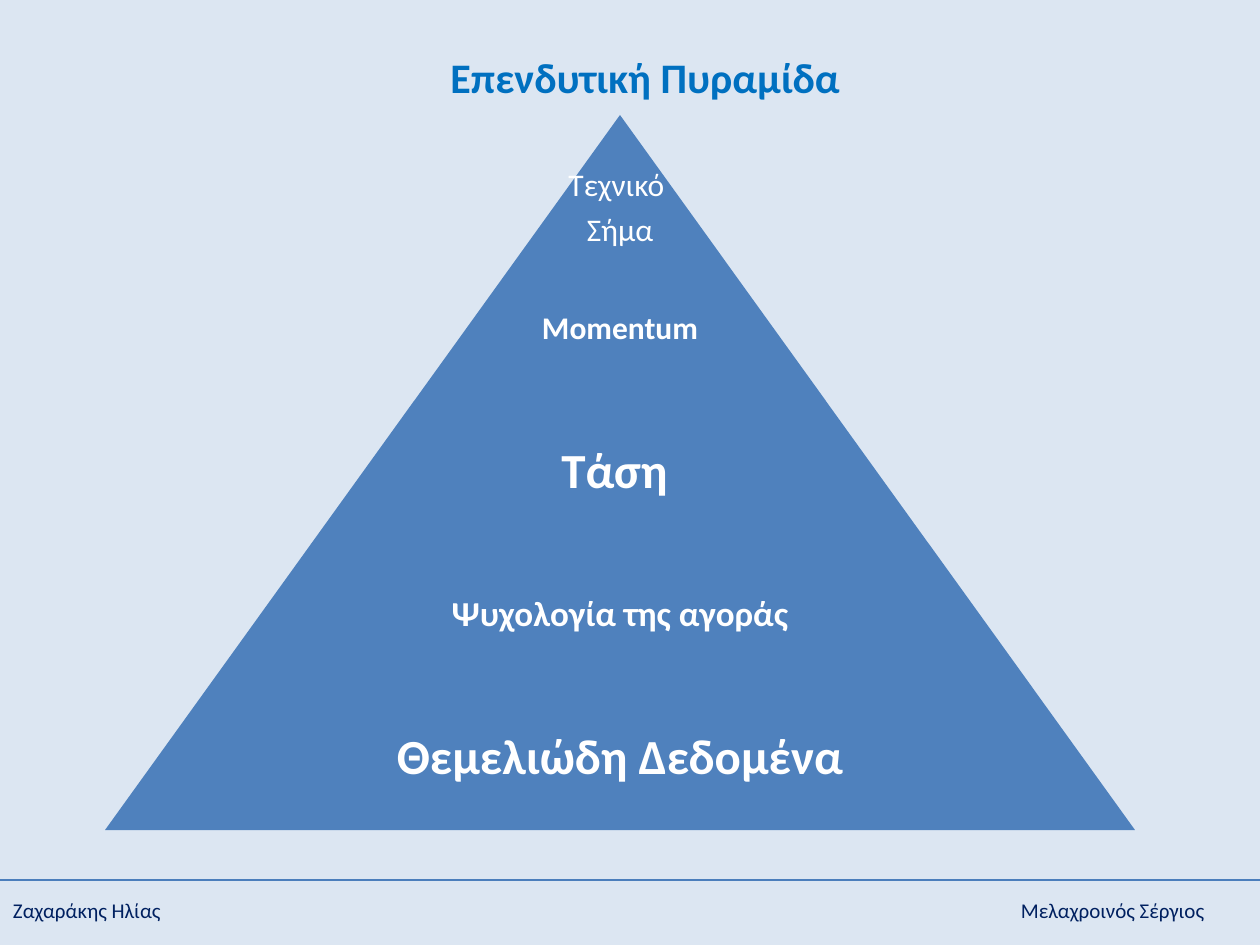
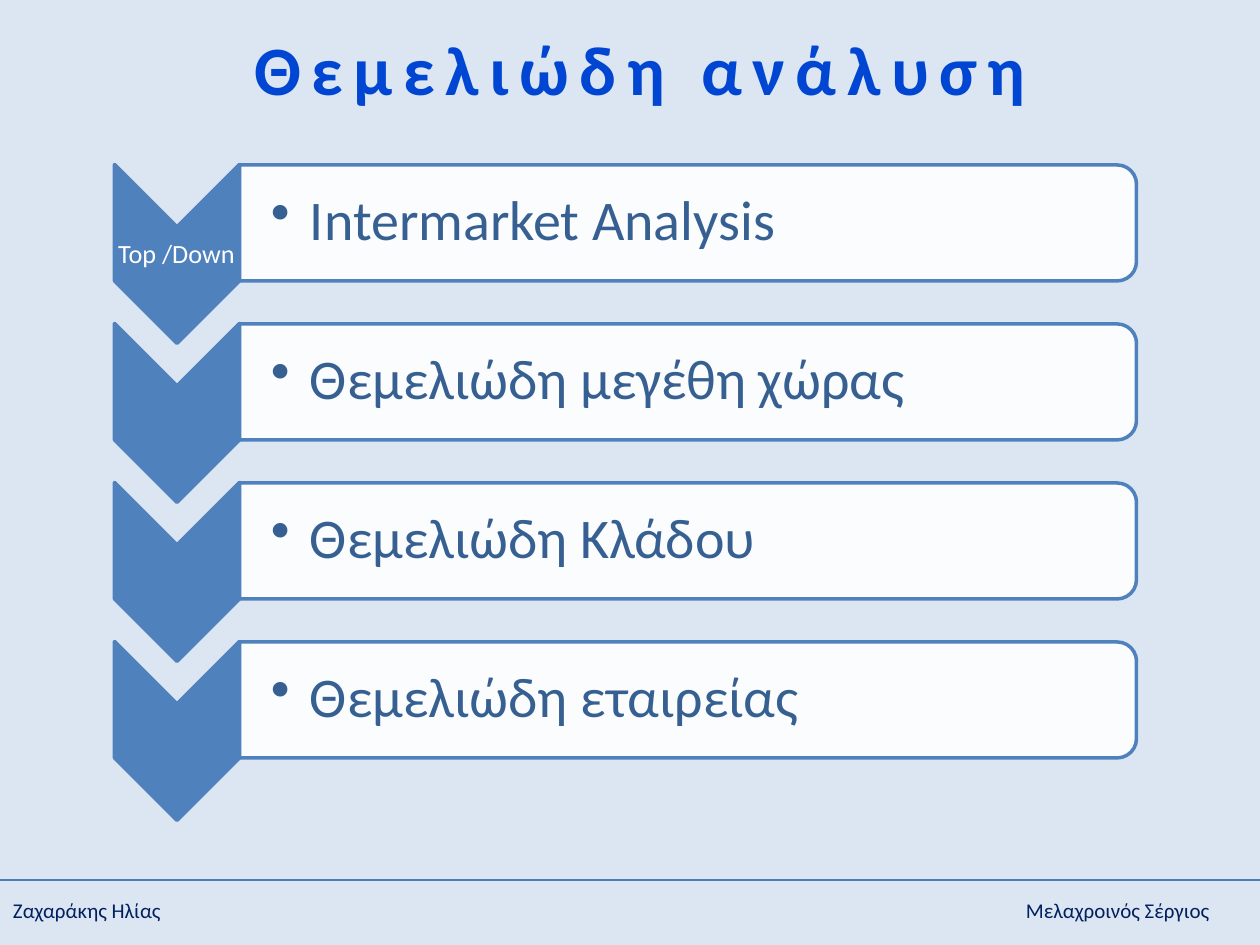
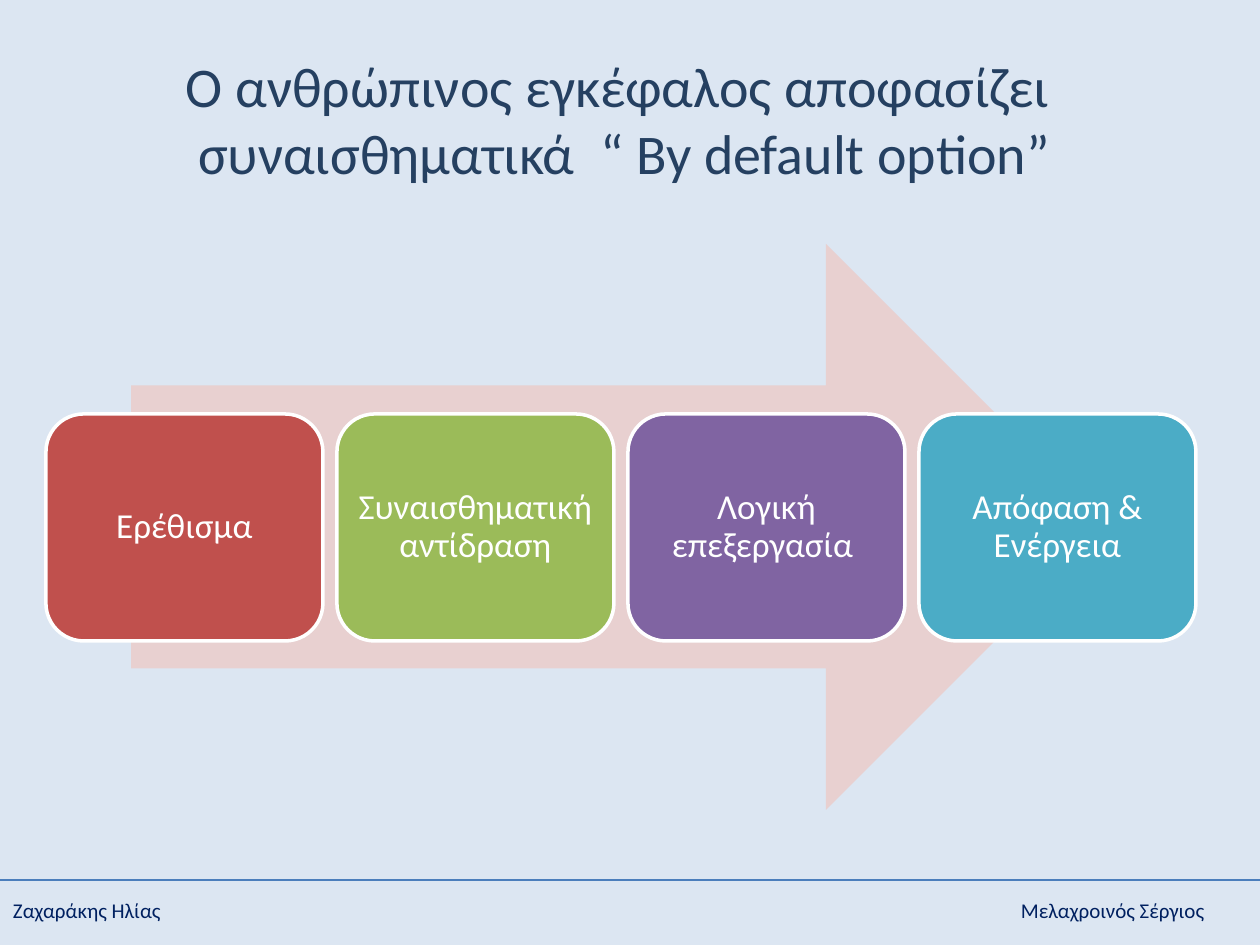
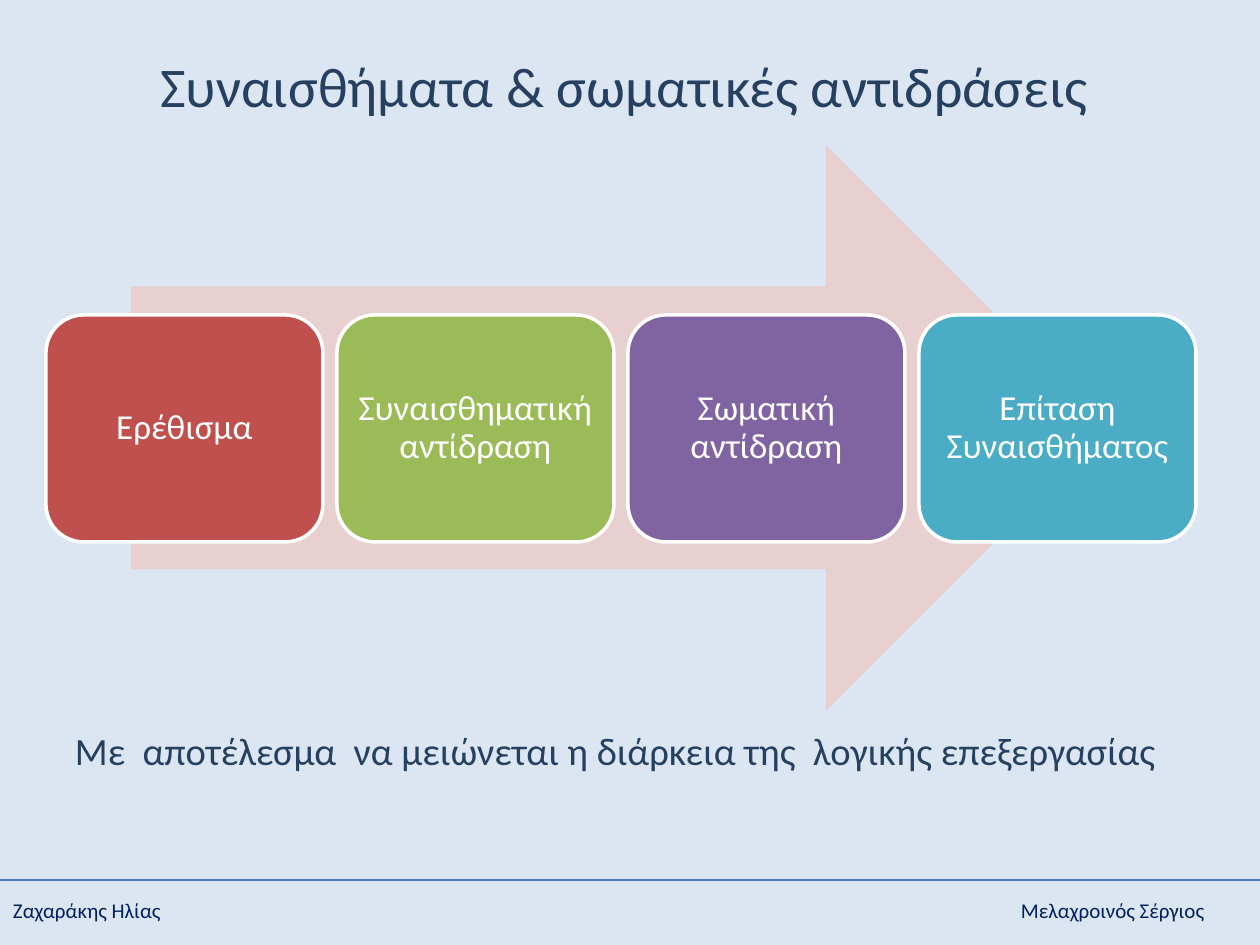
"""Builds four slides on the investment pyramid and emotional decisions."""
from dataclasses import dataclass

from lxml.etree import SubElement
from pptx import Presentation
from pptx.dml.color import RGBColor
from pptx.enum.shapes import MSO_CONNECTOR as Connector, MSO_SHAPE as Preset
from pptx.enum.text import MSO_ANCHOR as Anchor, MSO_AUTO_SIZE as AutoSize, PP_ALIGN as Align
from pptx.oxml.ns import qn
from pptx.util import Pt

SCALE = 914400 / 126
WIDTH, HEIGHT = 1260, 945
TITLE_ONLY = 5


@dataclass(frozen=True)
class Theme:
    """Colours, font and type sizes of the deck."""
    font: str = "Calibri"
    background: str = "DCE6F2"
    white: str = "FFFFFF"
    blue: str = "4F81BD"
    rule: str = "4B7EBC"
    footer: str = "002060"
    pyramid_title: str = "0070C0"
    analysis_title: str = "0046D2"
    ink: str = "254061"
    bullet: str = "376092"
    arrow: str = "E8D0D0"
    cards: tuple = ("C0504D", "9BBB59", "8064A2", "4BACC6")
    footer_size: int = 12
    tag_size: int = 15
    small_size: int = 18
    body_size: int = 20
    note_size: int = 22
    heading_size: int = 24
    level_size: int = 28
    title_size: int = 32
    display_size: float = 39.6


THEME = Theme()


def px(length):
    """Turns px into EMU."""
    return round(length * SCALE)


def write(frame, text, *, size, color, bold=False, align=Align.LEFT, anchor=Anchor.TOP,
          insets=(13, 6, 13, 6), line=None, after=0, spacing=0, indent=0, bullet=None, tab=None):
    """Fills a text frame, one paragraph for each line of text."""
    frame.word_wrap = True
    frame.auto_size = AutoSize.NONE
    frame.vertical_anchor = anchor
    frame.margin_left, frame.margin_top, frame.margin_right, frame.margin_bottom = map(px, insets)
    for number, words in enumerate(text.split("\n")):
        paragraph = frame.add_paragraph() if number else frame.paragraphs[0]
        paragraph.alignment = align
        paragraph.space_after = Pt(after)
        if line:
            paragraph.line_spacing = line
        properties = paragraph._p.get_or_add_pPr()
        if indent:
            properties.set("marL", str(px(indent)))
        if bullet:
            paragraph.level = 1
            properties.set("indent", str(-px(indent)))
            SubElement(properties, qn("a:buChar"), char=bullet)
        if tab:
            stops = SubElement(properties, qn("a:tabLst"))
            SubElement(stops, qn("a:tab"), pos=str(px(tab)), algn="l")
        run = paragraph.add_run()
        run.text = words
        run.font.name, run.font.size, run.font.bold = THEME.font, Pt(size), bold
        run.font.color.rgb = RGBColor.from_string(color)
        if spacing:
            run._r.get_or_add_rPr().set("spc", str(spacing * 100))


class Deck:
    """Holds the presentation, its theme and the current slide."""

    def __init__(self, theme):
        self.theme = theme
        self.show = Presentation()
        self.show.slide_width, self.show.slide_height = px(WIDTH), px(HEIGHT)
        backdrop = self.show.slide_master.background.fill
        backdrop.solid()
        backdrop.fore_color.rgb = RGBColor.from_string(theme.background)
        self.slide = None

    def start(self, title, box, name_tab=1008, **style):
        """Adds a slide with its title, footer and rule."""
        self.slide = self.show.slides.add_slide(self.show.slide_layouts[TITLE_ONLY])
        heading = self.slide.shapes.title
        heading.left, heading.top, heading.width, heading.height = map(px, box)
        style = dict(size=self.theme.title_size, color=self.theme.ink, align=Align.CENTER) | style
        write(heading.text_frame, title, **style)
        self.text("Ζαχαράκης Ηλίας \tΜελαχροινός Σέργιος", (0, 876, WIDTH, 69), tab=name_tab,
                  size=self.theme.footer_size, color=self.theme.footer, anchor=Anchor.MIDDLE)
        self.rule(880)

    def rule(self, y):
        """Draws a line across the slide."""
        rule = self.slide.shapes.add_connector(Connector.STRAIGHT, 0, px(y), px(WIDTH), px(y))
        rule.line.color.rgb = RGBColor.from_string(self.theme.rule)
        rule.line.width = Pt(1.5)
        SubElement(rule._element.spPr, qn("a:effectLst"))

    def text(self, words, box, **style):
        """Adds a text box."""
        write(self.slide.shapes.add_textbox(*map(px, box)).text_frame, words, **style)

    def shape(self, preset, box, fill, outline=None, rotation=0, opacity=None):
        """Adds a filled preset shape."""
        shape = self.slide.shapes.add_shape(preset, *map(px, box))
        shape.shadow.inherit = False
        shape.rotation = rotation
        shape.fill.solid()
        shape.fill.fore_color.rgb = RGBColor.from_string(fill)
        if opacity:
            color = shape._element.spPr.find(qn("a:solidFill"))[0]
            SubElement(color, qn("a:alpha"), val=str(opacity * 1000))
        if outline:
            shape.line.color.rgb = RGBColor.from_string(outline)
            shape.line.width = Pt(2)
        else:
            shape.line.fill.background()
        return shape

    def turned(self, preset, center, size, **look):
        """Adds a shape turned a quarter about its centre."""
        (x, y), (width, height) = center, size
        self.shape(preset, (x - width / 2, y - height / 2, width, height),
                   outline=self.theme.blue, rotation=90, **look)

    def process(self, top, steps):
        """Draws a row of cards over a broad arrow."""
        self.shape(Preset.RIGHT_ARROW, (131, top - 170, 978, 566), self.theme.arrow)
        for number, (step, fill) in enumerate(zip(steps, self.theme.cards)):
            card = self.shape(Preset.ROUNDED_RECTANGLE, (46 + 291 * number, top, 277, 227),
                              fill, outline=self.theme.white)
            write(card.text_frame, step, size=self.theme.body_size, color=self.theme.white,
                  align=Align.CENTER, anchor=Anchor.MIDDLE, insets=(9, 10, 9, 10), line=0.9)


def pyramid_slide(deck):
    """Builds the investment pyramid."""
    theme = deck.theme
    deck.start("Επενδυτική Πυραμίδα ", (154, 45, 992, 63), bold=True,
               size=theme.heading_size, color=theme.pyramid_title)
    apex, top, rise, run = 620, 115, 143, 103
    levels = [("Τεχνικό \nΣήμα", theme.small_size), ("Momentum", theme.small_size),
              ("Τάση ", theme.level_size), ("Ψυχολογία της αγοράς", theme.body_size),
              ("Θεμελιώδη Δεδομένα", theme.level_size)]
    for number, (level, size) in enumerate(levels):
        y, half = top + rise * number, run * (number + 1)
        band = deck.shape(Preset.TRAPEZOID, (apex - half, y, 2 * half, rise), theme.blue)
        band.adjustments[0] = run / rise
        is_tip = number == 0
        reach = half if is_tip else round(half * 0.65)
        deck.text(level, (apex - reach, y, 2 * reach, rise), size=size, color=theme.white,
                  bold=not is_tip, align=Align.CENTER, anchor=Anchor.MIDDLE, line=0.9,
                  after=6.3 if is_tip else 0, insets=(4, 49 if is_tip else 4, 4, 4))


def analysis_slide(deck):
    """Builds the top-down list of fundamental analysis."""
    theme = deck.theme
    deck.start("Θεμελιώδη ανάλυση", (105, 16, 1071, 139), name_tab=1013, bold=True, spacing=6,
               size=theme.display_size, color=theme.analysis_title, insets=(13, 10, 13, 6))
    stages = ["Intermarket Analysis", "Θεμελιώδη μεγέθη χώρας",
              "Θεμελιώδη Κλάδου", "Θεμελιώδη εταιρείας"]
    for number, stage in enumerate(stages):
        middle = 223 + 159 * number
        deck.turned(Preset.CHEVRON, (177, middle + 31), (179, 125), fill=theme.blue)
        if number == 0:
            deck.text("Top /Down", (114, 228, 125, 54), size=theme.tag_size, color=theme.white,
                      align=Align.CENTER, anchor=Anchor.MIDDLE, insets=(1, 1, 1, 1), line=0.9)
        deck.turned(Preset.ROUND_2_SAME_RECTANGLE, (688, middle), (116, 897),
                    fill=theme.white, opacity=90)
        deck.text(stage, (239, middle - 53, 891, 105), size=theme.title_size, color=theme.bullet,
                  anchor=Anchor.MIDDLE, insets=(32, 3, 3, 3), line=0.9, indent=39, bullet="•")


def decision_slide(deck):
    """Builds the path from stimulus to action."""
    deck.start("O ανθρώπινος εγκέφαλος αποφασίζει  συναισθηματικά  “ By default option”",
               (84, 45, 1081, 149))
    deck.process(414, ["Ερέθισμα", "Συναισθηματική αντίδραση",
                       "Λογική επεξεργασία ", "Απόφαση & Ενέργεια"])


def reaction_slide(deck):
    """Builds the path from stimulus to stronger emotion."""
    deck.start("Συναισθήματα & σωματικές αντιδράσεις", (84, 45, 1081, 81))
    deck.process(315, ["Ερέθισμα", "Συναισθηματική αντίδραση",
                       "Σωματική αντίδραση", "Επίταση Συναισθήματος"])
    deck.text("Με  αποτέλεσμα  να μειώνεται η διάρκεια της  λογικής επεξεργασίας",
              (44, 721, 1160, 59), size=deck.theme.note_size, color=deck.theme.ink, indent=18)


def main():
    """Builds and saves the deck."""
    deck = Deck(THEME)
    for build in (pyramid_slide, analysis_slide, decision_slide, reaction_slide):
        build(deck)
    deck.show.save("out.pptx")


if __name__ == "__main__":
    main()
